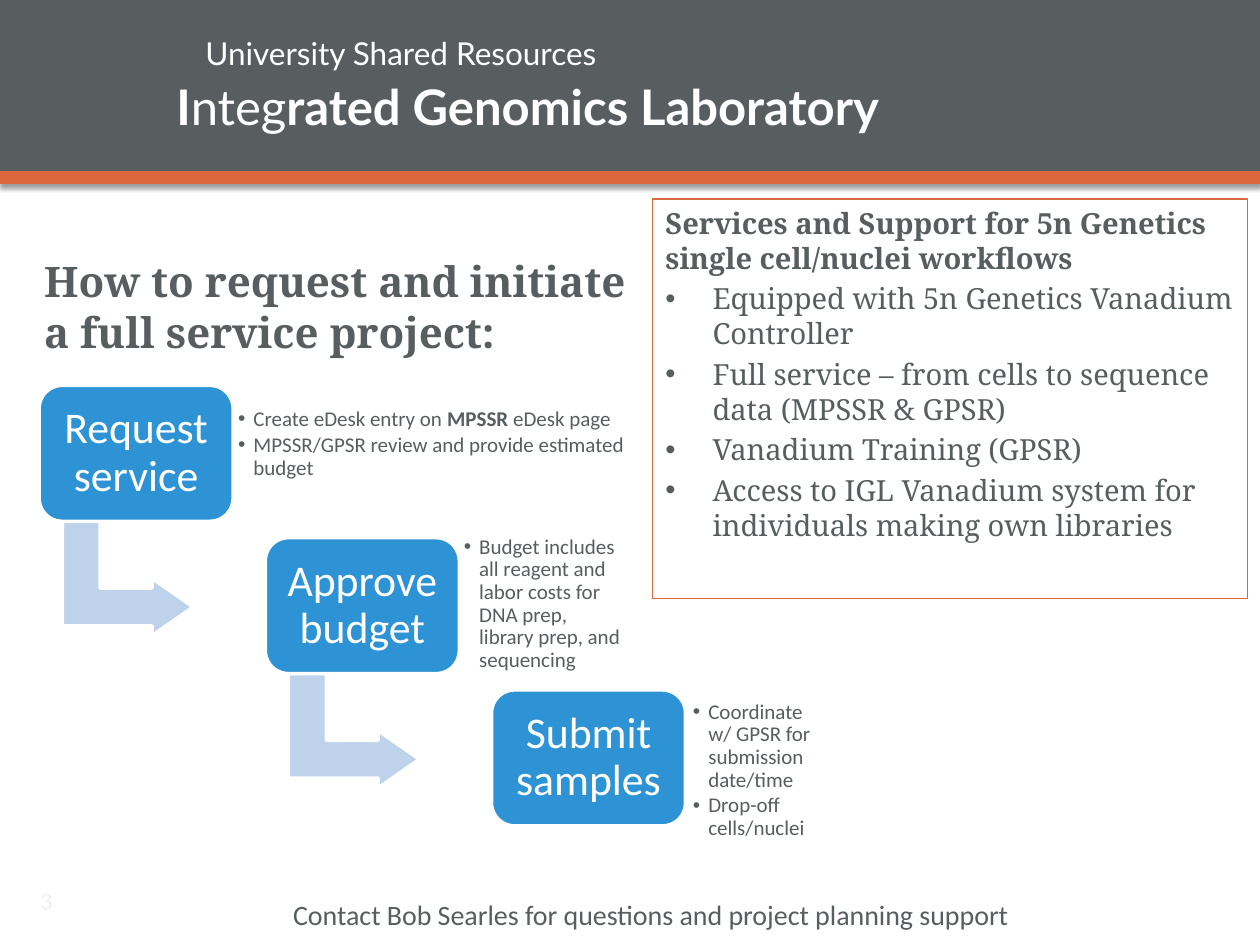
from dataclasses import dataclass

from lxml.etree import SubElement
from pptx import Presentation
from pptx.dml.color import RGBColor
from pptx.enum.shapes import MSO_CONNECTOR, MSO_SHAPE
from pptx.enum.text import MSO_ANCHOR, MSO_AUTO_SIZE, PP_ALIGN
from pptx.oxml.ns import qn
from pptx.util import Cm, Pt

GREY, ORANGE, BLUE, PALE_BLUE, WHITE = "585E60", "DB673F", "2E93D5", "BED2EB", "FFFFFF"
FAINT = "EEEEEE"
SERIF, SANS, HEADING = "Noto Serif", "Calibri", "Lato"

# Staircase of steps, in cm
STEP_LEFT, STEP_TOP, STEP_DX, STEP_DY = 0.79, 7.77, 4.56, 3.07
STEP_WIDTH, STEP_HEIGHT = 3.91, 2.74


@dataclass
class Box:
    left: float
    top: float
    width: float
    height: float

    def lengths(self) -> tuple:
        return Cm(self.left), Cm(self.top), Cm(self.width), Cm(self.height)


@dataclass
class Step:
    label: str
    details: list  # each detail is a list of (text, bold) pieces
    details_box: Box


STEPS = [
    Step("Request service",
         [[("Create eDesk entry on ", False), ("MPSSR ", True), ("eDesk page", False)],
          [("MPSSR/GPSR review and provide estimated budget", False)]],
         Box(4.67, 7.75, 8.31, 2.41)),
    Step("Approve budget",
         [[("Budget includes all reagent and labor costs for DNA prep, "
            "library prep, and sequencing", False)]],
         Box(9.22, 11.07, 3.43, 2.21)),
    Step("Submit samples",
         [[("Coordinate w/ GPSR for submission date/time", False)],
          [("Drop-off cells/nuclei", False)]],
         Box(13.84, 14.43, 2.77, 2.21)),
]

SERVICES_HEADING = "Services and Support for 5n Genetics single cell/nuclei workflows"
SERVICES = [
    "Equipped with 5n Genetics Vanadium Controller",
    "Full service – from cells to sequence data (MPSSR & GPSR)",
    "Vanadium Training (GPSR)",
    "Access to IGL Vanadium system for individuals making own libraries",
]


def color(value: str) -> RGBColor:
    return RGBColor.from_string(value)


def set_font(font, face: str, size: float, value: str, bold: bool = False) -> None:
    font.name, font.size, font.bold = face, Pt(size), bold
    font.color.rgb = color(value)


def set_insets(frame, inset: float) -> None:
    frame.margin_left = frame.margin_right = Cm(inset)
    frame.margin_top = frame.margin_bottom = Cm(inset)


def set_bullet(paragraph, indent: float) -> None:
    """Give the paragraph a hanging bullet, or none when the indent is 0."""
    properties = paragraph._p.get_or_add_pPr()
    properties.set("marL", str(Cm(indent)))
    properties.set("indent", str(-Cm(indent)))
    if indent:
        SubElement(properties, qn("a:buFont"), typeface="Arial")
        SubElement(properties, qn("a:buChar"), char="•")
    else:
        SubElement(properties, qn("a:buNone"))


def add_pieces(paragraph, pieces: list, face: str, size: float, value: str) -> None:
    for text, bold in pieces:
        run = paragraph.add_run()
        run.text = text
        set_font(run.font, face, size, value, bold)


def add_drop_shadow(shape, opacity: int) -> None:
    effects = SubElement(shape._element.spPr, qn("a:effectLst"))
    shadow = SubElement(effects, qn("a:outerShdw"), blurRad=str(Pt(3.1)),
                        dist=str(Pt(1.7)), dir="5400000", rotWithShape="0")
    black = SubElement(shadow, qn("a:srgbClr"), val="000000")
    SubElement(black, qn("a:alpha"), val=str(opacity * 1000))


def add_label(slide, box: Box, text: str, face: str, size: float, value: str,
              bold: bool = False):
    frame = slide.shapes.add_textbox(*box.lengths()).text_frame
    frame.word_wrap = True
    frame.text = text
    set_font(frame.paragraphs[0].runs[0].font, face, size, value, bold)
    return frame


def add_block(slide, kind, box: Box, fill: str, adjustments: list):
    block = slide.shapes.add_shape(kind, *box.lengths())
    block.shadow.inherit = False
    block.fill.solid()
    block.fill.fore_color.rgb = color(fill)
    block.line.color.rgb = color(WHITE)
    block.line.width = Pt(2)
    for index, amount in enumerate(adjustments):
        block.adjustments[index] = amount
    return block


def add_header(slide) -> None:
    band = slide.shapes.add_shape(MSO_SHAPE.RECTANGLE, 0, 0, Cm(25.4), Cm(3.51))
    band.fill.solid()
    band.fill.fore_color.rgb = color(GREY)
    band.line.fill.background()
    add_drop_shadow(band, 35)
    rule = slide.shapes.add_connector(MSO_CONNECTOR.STRAIGHT, 0, Cm(3.58), Cm(25.4), Cm(3.58))
    rule.line.color.rgb = color(ORANGE)
    rule.line.width = Pt(7)
    add_drop_shadow(rule, 38)
    subtitle = add_label(slide, Box(3.89, 0.18, 21.03, 1.42),
                         "University Shared Resources", HEADING, 18, WHITE)
    subtitle.paragraphs[0].line_spacing = 1.5

    title = slide.shapes.title
    title.left, title.top, title.width, title.height = Box(3.3, 0.97, 22.1, 2.31).lengths()
    frame = title.text_frame
    frame.auto_size = MSO_AUTO_SIZE.NONE
    frame.vertical_anchor = MSO_ANCHOR.MIDDLE
    frame.paragraphs[0].alignment = PP_ALIGN.LEFT
    pieces = [("I", True), ("nteg", False), ("rated Genomics Laboratory", True)]
    add_pieces(frame.paragraphs[0], pieces, HEADING, 28, WHITE)
    # The title comes after the band so that it lies in front of it
    slide.shapes._spTree.append(title._element)


def add_services(slide) -> None:
    panel = slide.placeholders[1]
    panel.left, panel.top, panel.width, panel.height = Box(13.16, 4.01, 11.99, 8.05).lengths()
    panel.line.color.rgb = color(ORANGE)
    panel.line.width = Pt(0.75)
    frame = panel.text_frame
    frame.auto_size = MSO_AUTO_SIZE.NONE
    frame.text = "\n".join([SERVICES_HEADING, *SERVICES])
    for index, paragraph in enumerate(frame.paragraphs):
        paragraph.space_before = Pt(3.3 if index else 0)
        set_bullet(paragraph, 0.95 if index else 0)
        set_font(paragraph.runs[0].font, SERIF, 16.6, GREY, bold=index == 0)


def add_step(slide, index: int, step: Step) -> None:
    left, top = STEP_LEFT + index * STEP_DX, STEP_TOP + index * STEP_DY
    if index < len(STEPS) - 1:
        arrow = add_block(slide, MSO_SHAPE.BENT_UP_ARROW, Box(left + 0.63, top + 2.57, 2.31, 2.64),
                          PALE_BLUE, [0.33, 0.25, 0.36])
        arrow.rotation = 90
    card = add_block(slide, MSO_SHAPE.ROUNDED_RECTANGLE,
                     Box(left, top, STEP_WIDTH, STEP_HEIGHT), BLUE, [0.17])
    frame = card.text_frame
    frame.text = step.label
    frame.vertical_anchor = MSO_ANCHOR.MIDDLE
    set_insets(frame, 0.25)
    label = frame.paragraphs[0]
    label.alignment, label.line_spacing = PP_ALIGN.CENTER, 0.9
    set_font(label.runs[0].font, SANS, 25, WHITE)

    details = slide.shapes.add_textbox(*step.details_box.lengths()).text_frame
    details.word_wrap = True
    details.vertical_anchor = MSO_ANCHOR.MIDDLE
    set_insets(details, 0.13)
    for number, pieces in enumerate(step.details):
        paragraph = details.add_paragraph() if number else details.paragraphs[0]
        paragraph.line_spacing, paragraph.space_after = 0.9, Pt(1.8)
        set_bullet(paragraph, 0.31)
        add_pieces(paragraph, pieces, SANS, 12, GREY)


def main() -> None:
    deck = Presentation()
    deck.slide_width, deck.slide_height = Cm(25.4), Cm(19.05)
    slide = deck.slides.add_slide(deck.slide_layouts[1])
    add_header(slide)
    add_services(slide)
    for index, step in enumerate(STEPS):
        add_step(slide, index, step)
    page_number = add_label(slide, Box(0.58, 17.65, 1.65, 1.02), "3", SERIF, 12, FAINT)
    page_number.vertical_anchor = MSO_ANCHOR.MIDDLE
    add_label(slide, Box(0.64, 5.03, 12.65, 2.31),
              "How to request and initiate a full service project:", SERIF, 24, GREY, bold=True)
    add_label(slide, Box(5.66, 17.96, 16.43, 0.94),
              "Contact Bob Searles for questions and project planning support", SANS, 16, GREY)
    deck.save("out.pptx")


if __name__ == "__main__":
    main()
